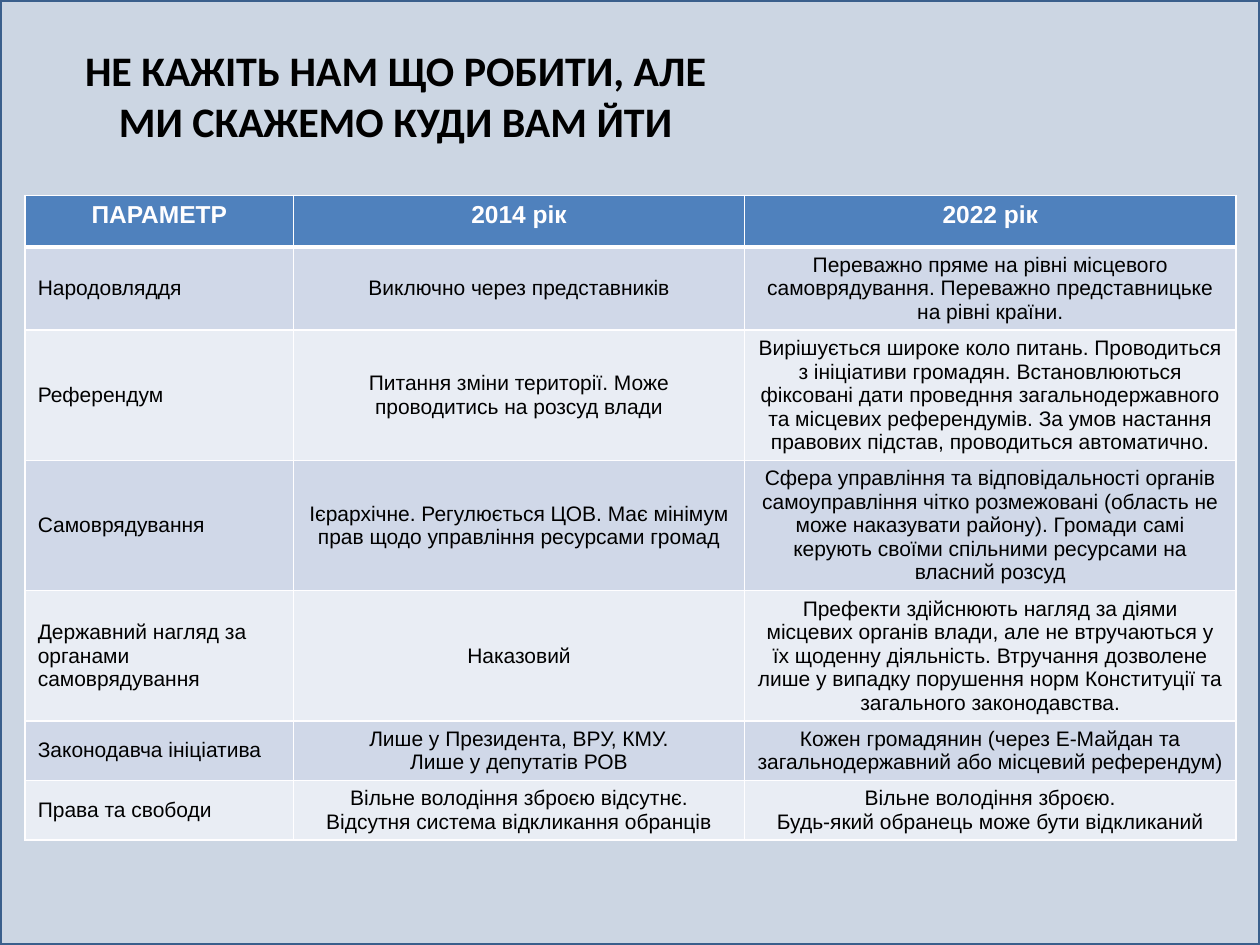
from lxml import etree
from pptx import Presentation
from pptx.dml.color import RGBColor
from pptx.enum.shapes import MSO_SHAPE
from pptx.enum.text import MSO_ANCHOR, PP_ALIGN
from pptx.oxml.ns import qn
from pptx.util import Inches, Pt

LEFT, CENTER = PP_ALIGN.LEFT, PP_ALIGN.CENTER
TOP, MIDDLE = MSO_ANCHOR.TOP, MSO_ANCHOR.MIDDLE

PAPER = RGBColor(0xFF, 0xFE, 0xFF)
BLACK = RGBColor(0x00, 0x00, 0x00)
VEIL = RGBColor(0x37, 0x60, 0x92)
FRAME = RGBColor(0x3A, 0x5F, 0x8C)
HEADER = RGBColor(0x4F, 0x81, 0xBD)
BANDS = (RGBColor(0xD0, 0xD8, 0xE8), RGBColor(0xE9, 0xED, 0xF4))

TITLE = "НЕ КАЖІТЬ НАМ ЩО РОБИТИ, АЛЕ МИ СКАЖЕМО КУДИ ВАМ ЙТИ"
COLUMN_WIDTHS = (2.13, 3.58, 3.9)
ROW_HEIGHTS = (0.41, 0.66, 1.03, 1.03, 1.03, 0.47, 0.47)
ROWS = [
    ("ПАРАМЕТР", "2014 рік", "2022 рік"),
    ("Народовляддя",
     "Виключно через представників",
     "Переважно пряме на рівні місцевого самоврядування. "
     "Переважно представницьке на рівні країни."),
    ("Референдум",
     "Питання зміни території. Може проводитись на розсуд влади",
     "Вирішується широке коло питань. Проводиться з ініціативи громадян. "
     "Встановлюються фіксовані дати проведння загальнодержавного та місцевих "
     "референдумів. За умов настання правових підстав, проводиться автоматично."),
    ("Самоврядування",
     "Ієрархічне. Регулюється ЦОВ. Має мінімум прав щодо управління ресурсами громад",
     "Сфера управління та відповідальності органів самоуправління чітко розмежовані "
     "(область не може наказувати району). Громади самі керують своїми спільними "
     "ресурсами на власний розсуд"),
    ("Державний нагляд за органами самоврядування",
     "Наказовий",
     "Префекти здійснюють нагляд за діями місцевих органів влади, але не втручаються "
     "у їх щоденну діяльність. Втручання дозволене лише у випадку порушення норм "
     "Конституції та загального законодавства."),
    ("Законодавча ініціатива",
     "Лише у Президента, ВРУ, КМУ.\nЛише у депутатів РОВ",
     "Кожен громадянин (через Е-Майдан та загальнодержавний або місцевий референдум)"),
    ("Права та свободи",
     "Вільне володіння зброєю відсутнє. Відсутня система відкликання обранців",
     "Вільне володіння зброєю.\nБудь-який обранець може бути відкликаний"),
]


def write_text(frame, text, *, font, size, color=BLACK, bold=False, align=CENTER):
    frame.text = text
    frame.word_wrap = True
    for paragraph in frame.paragraphs:
        paragraph.alignment = align
        paragraph.font.name = font
        paragraph.font.size = Pt(size)
        paragraph.font.bold = bold
        paragraph.font.color.rgb = color


def set_borders(cell, color, widths):
    """Draw cell borders; widths are points for left, right, top, bottom."""
    properties = cell._tc.get_or_add_tcPr()
    for index, (side, width) in enumerate(zip("LRTB", widths)):
        line = etree.Element(qn(f"a:ln{side}"), w=str(Pt(width)))
        fill = etree.SubElement(line, qn("a:solidFill"))
        etree.SubElement(fill, qn("a:srgbClr"), val=str(color))
        properties.insert(index, line)


def add_backdrop(slide, width, height):
    """Cover the slide with a framed translucent veil, behind everything else."""
    veil = slide.shapes.add_shape(MSO_SHAPE.RECTANGLE, 0, 0, width, height)
    veil.shadow.inherit = False
    veil.fill.solid()
    veil.fill.fore_color.rgb = VEIL
    color = veil.fill._xPr.find(f".//{qn('a:srgbClr')}")
    etree.SubElement(color, qn("a:alpha"), val="25000")
    veil.line.color.rgb = FRAME
    veil.line.width = Pt(2)
    slide.shapes._spTree.insert(2, veil._element)


def add_comparison_table(slide):
    table = slide.shapes.add_table(
        len(ROWS), len(COLUMN_WIDTHS), Inches(0.2), Inches(1.55),
        Inches(sum(COLUMN_WIDTHS)), Inches(sum(ROW_HEIGHTS))).table
    for column, width in zip(table.columns, COLUMN_WIDTHS):
        column.width = Inches(width)
    for row, height in zip(table.rows, ROW_HEIGHTS):
        row.height = Inches(height)

    for row_index, texts in enumerate(ROWS):
        is_header = row_index == 0
        for column_index, text in enumerate(texts):
            cell = table.cell(row_index, column_index)
            cell.vertical_anchor = TOP if is_header else MIDDLE
            cell.fill.solid()
            cell.fill.fore_color.rgb = HEADER if is_header else BANDS[(row_index - 1) % 2]
            set_borders(cell, PAPER, (1, 1, 3 if row_index == 1 else 1, 3 if is_header else 1))
            write_text(cell.text_frame, text, font="Arial",
                       size=14 if is_header else 12,
                       color=PAPER if is_header else BLACK,
                       bold=is_header,
                       align=CENTER if is_header or column_index else LEFT)


def main():
    presentation = Presentation()
    presentation.slide_width = Inches(10)
    presentation.slide_height = Inches(7.5)
    slide = presentation.slides.add_slide(presentation.slide_layouts[5])
    slide.background.fill.solid()
    slide.background.fill.fore_color.rgb = PAPER
    add_backdrop(slide, presentation.slide_width, presentation.slide_height)

    title = slide.shapes.title
    title.left, title.top = Inches(0.42), Inches(0.28)
    title.width, title.height = Inches(5.44), Inches(0.95)
    title.text_frame.vertical_anchor = MIDDLE
    write_text(title.text_frame, TITLE, font="Calibri", size=24, bold=True)

    add_comparison_table(slide)
    presentation.save("out.pptx")


if __name__ == "__main__":
    main()
